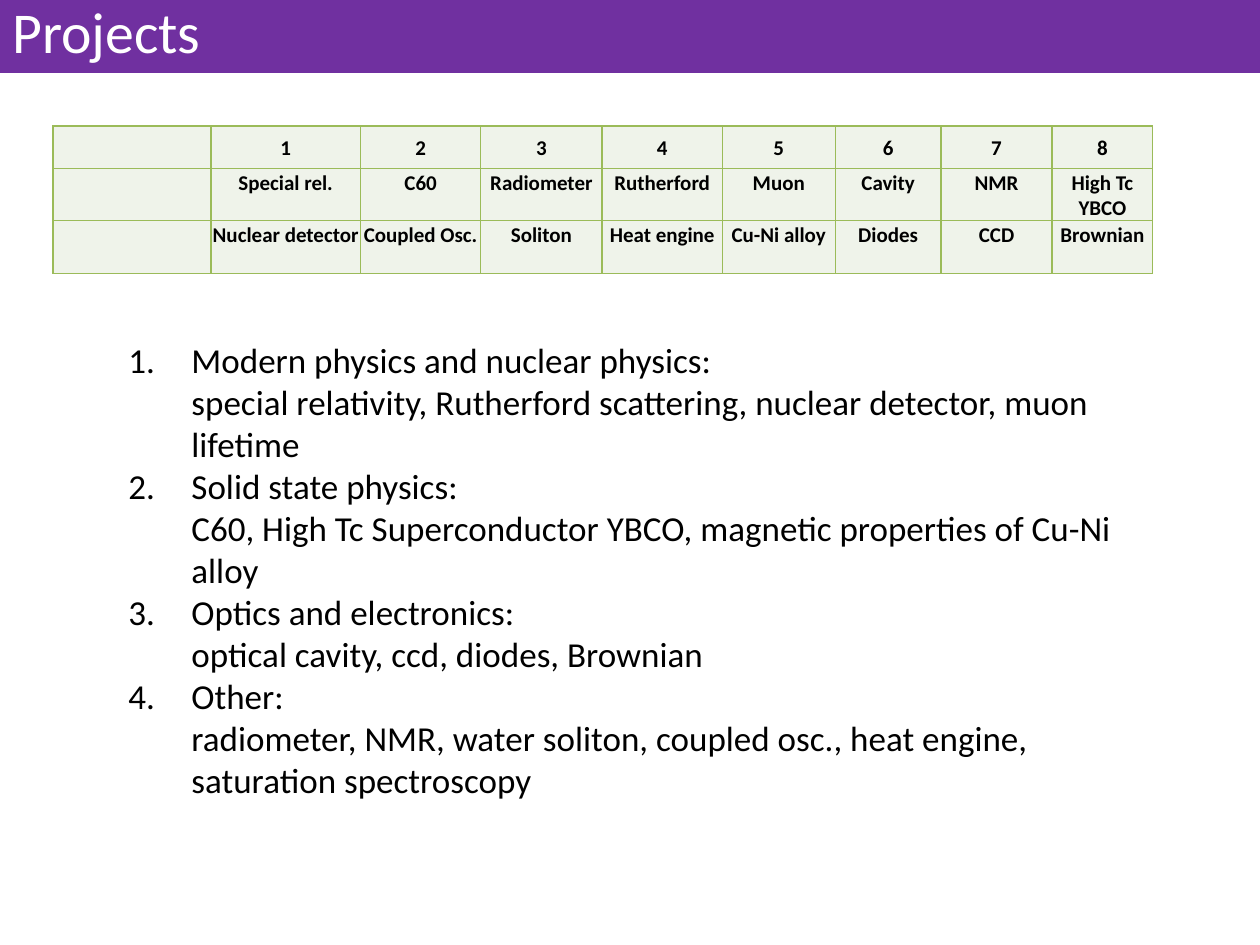
from lxml.etree import SubElement
from pptx import Presentation
from pptx.dml.color import RGBColor
from pptx.enum.shapes import MSO_SHAPE
from pptx.enum.text import MSO_ANCHOR, PP_ALIGN
from pptx.oxml.ns import qn
from pptx.util import Cm, Pt


def color(hex_string):
    return RGBColor.from_string(hex_string)


def add_span(paragraph, text, size, hex_string="000000", bold=False):
    span = paragraph.add_run()
    span.text = text
    span.font.name = "Calibri"
    span.font.size = Pt(size)
    span.font.bold = bold
    span.font.color.rgb = color(hex_string)


deck = Presentation()
deck.slide_width, deck.slide_height = Cm(25.4), Cm(19.05)
page = deck.slides.add_slide(deck.slide_layouts[6])

# Title band
band = page.shapes.add_shape(MSO_SHAPE.RECTANGLE, 0, 0, Cm(25.4), Cm(1.47))
band.shadow.inherit = False
band.fill.solid()
band.fill.fore_color.rgb = color("7030A0")
band.line.fill.background()

title_box = page.shapes.add_textbox(0, 0, Cm(22.86), Cm(1.47))
title_box.text_frame.word_wrap = True
title_box.text_frame.vertical_anchor = MSO_ANCHOR.MIDDLE
title = title_box.text_frame.paragraphs[0]
title.line_spacing = 0.8
add_span(title, "Projects", 33, "FFFFFF")

# Project table
column_widths = [3.18, 3.02, 2.42, 2.45, 2.42, 2.28, 2.13, 2.24, 2.03]
row_heights = [0.86, 1.04, 1.07]
projects = [
    ["", "1", "2", "3", "4", "5", "6", "7", "8"],
    ["", "Special rel.", "C60", "Radiometer", "Rutherford", "Muon", "Cavity",
     "NMR", "High Tc YBCO"],
    ["", "Nuclear detector", "Coupled Osc.", "Soliton", "Heat engine",
     "Cu-Ni alloy", "Diodes", "CCD", "Brownian"],
]
table = page.shapes.add_table(
    len(projects), len(column_widths), Cm(1.07), Cm(2.54),
    Cm(sum(column_widths)), Cm(sum(row_heights))).table
for column, width in zip(table.columns, column_widths):
    column.width = Cm(width)
for row, height in zip(table.rows, row_heights):
    row.height = Cm(height)

for row_number, names in enumerate(projects):
    for column_number, name in enumerate(names):
        cell = table.cell(row_number, column_number)
        cell.margin_left = cell.margin_right = cell.margin_top = Cm(0.03)
        cell.margin_bottom = 0
        cell.vertical_anchor = MSO_ANCHOR.TOP if row_number else MSO_ANCHOR.MIDDLE
        # Borders must come before the fill in the cell properties
        properties = cell._tc.get_or_add_tcPr()
        for side in ("a:lnL", "a:lnR", "a:lnT", "a:lnB"):
            border = SubElement(properties, qn(side), w=str(Pt(1)))
            fill = SubElement(border, qn("a:solidFill"))
            SubElement(fill, qn("a:srgbClr"), val="9BBB59")
        cell.fill.solid()
        cell.fill.fore_color.rgb = color("EFF3EA")
        if name:
            paragraph = cell.text_frame.paragraphs[0]
            paragraph.alignment = PP_ALIGN.CENTER
            add_span(paragraph, name, 12, bold=True)

# Numbered topics
topics = [
    ("Modern physics and nuclear physics: ",
     "special relativity, Rutherford scattering, nuclear detector, muon lifetime"),
    ("Solid state physics:",
     "C60, High Tc Superconductor YBCO, magnetic properties of Cu-Ni alloy"),
    ("Optics and electronics:", "optical cavity, ccd, diodes, Brownian"),
    ("Other: ",
     "radiometer, NMR, water soliton, coupled osc., heat engine, "
     "saturation spectroscopy"),
]
topic_box = page.shapes.add_textbox(Cm(2.34), Cm(6.7), Cm(21.16), Cm(9.65))
topic_frame = topic_box.text_frame
topic_frame.word_wrap = True
for number, (heading, details) in enumerate(topics):
    paragraph = topic_frame.add_paragraph() if number else topic_frame.paragraphs[0]
    properties = paragraph._p.get_or_add_pPr()
    properties.set("marL", str(Cm(1.27)))
    properties.set("indent", str(-Cm(1.27)))
    SubElement(properties, qn("a:buFont"), typeface="+mj-lt")
    SubElement(properties, qn("a:buAutoNum"), type="arabicPeriod")
    add_span(paragraph, heading, 20)
    paragraph.add_line_break()
    add_span(paragraph, details, 20)

deck.save("out.pptx")
